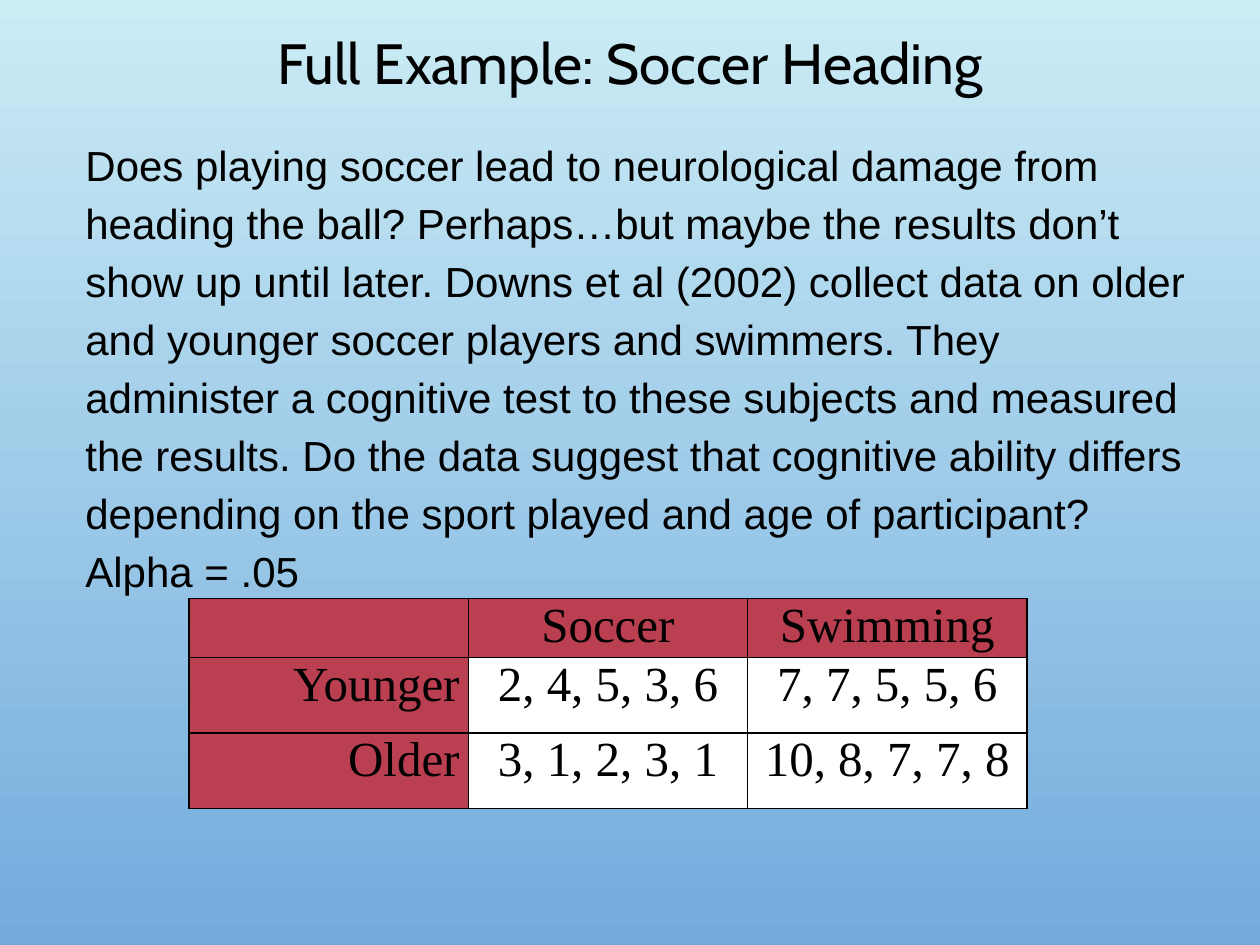
from lxml.etree import SubElement
from pptx import Presentation
from pptx.dml.color import RGBColor
from pptx.enum.text import MSO_ANCHOR, PP_ALIGN
from pptx.oxml.ns import qn
from pptx.util import Inches, Pt

BLACK, WHITE, RED = "000000", "FFFFFF", "BA3F51"
ROWS = [
    ["", "Soccer", "Swimming"],
    ["Younger", "2, 4, 5, 3, 6", "7, 7, 5, 5, 6"],
    ["Older", "3, 1, 2, 3, 1", "10, 8, 7, 7, 8"],
]
HEIGHTS = [0.43, 0.6, 0.6]
QUESTION = (
    "Does playing soccer lead to neurological damage from heading the ball? "
    "Perhaps…but maybe the results don’t show up until later. "
    "Downs et al (2002) collect data on older and younger soccer players and "
    "swimmers. They administer a cognitive test to these subjects and measured "
    "the results. Do the data suggest that cognitive ability differs depending "
    "on the sport played and age of participant? Alpha = .05"
)


def color(code):
    return RGBColor.from_string(code)


def write(frame, text, size=24, font="Arial", ink=BLACK,
          align=PP_ALIGN.LEFT, lead=None):
    frame.word_wrap = True
    para = frame.paragraphs[0]
    para.alignment = align
    para.line_spacing = lead
    run = para.add_run()
    run.text = text
    run.font.size = Pt(size)
    run.font.name = font
    run.font.color.rgb = color(ink)


def add_text(slide, box, text, anchor=MSO_ANCHOR.TOP, **style):
    frame = slide.shapes.add_textbox(*map(Inches, box)).text_frame
    frame.vertical_anchor = anchor
    write(frame, text, **style)


def paint(slide, top, bottom):
    fill = slide.background.fill
    fill.gradient()
    fill.gradient_angle = 270
    for stop, code in zip(fill.gradient_stops, (top, bottom)):
        stop.color.rgb = color(code)


def border(cell, code, width):
    props = cell._tc.get_or_add_tcPr()
    for side in ("a:lnL", "a:lnR", "a:lnT", "a:lnB"):
        line = SubElement(props, qn(side), w=str(Pt(width)))
        fill = SubElement(line, qn("a:solidFill"))
        SubElement(fill, qn("a:srgbClr"), val=code)


def add_cell(cell, text, head, align):
    cell.margin_left = cell.margin_right = Inches(0.07)
    cell.margin_top = cell.margin_bottom = 0
    border(cell, BLACK, 1)  # borders come before the fill in the XML
    cell.fill.solid()
    cell.fill.fore_color.rgb = color(RED if head else WHITE)
    if text:
        write(cell.text_frame, text, size=28, font="Times New Roman",
              align=align)


def add_grid(slide, left, top, width):
    table = slide.shapes.add_table(
        len(ROWS), len(ROWS[0]), Inches(left), Inches(top),
        Inches(width), Inches(sum(HEIGHTS))).table
    for r, (row, height) in enumerate(zip(ROWS, HEIGHTS)):
        table.rows[r].height = Inches(height)
        for c, text in enumerate(row):
            align = PP_ALIGN.CENTER if c else PP_ALIGN.RIGHT
            add_cell(table.cell(r, c), text, r == 0 or c == 0, align)


def main():
    deck = Presentation()
    deck.slide_width, deck.slide_height = Inches(10), Inches(7.5)
    slide = deck.slides.add_slide(deck.slide_layouts[6])
    paint(slide, "CBECF5", "73ABDD")

    # Title and research question
    add_text(slide, (0.5, 0.3, 9, 0.45), "Full Example: Soccer Heading",
             anchor=MSO_ANCHOR.MIDDLE, size=32.4, font="Cabin",
             align=PP_ALIGN.CENTER, lead=0.9)
    add_text(slide, (0.58, 1, 9, 3.75), QUESTION, lead=1.15)

    # Scores by age and sport
    add_grid(slide, 1.5, 4.75, 6.65)
    deck.save("out.pptx")


if __name__ == "__main__":
    main()
